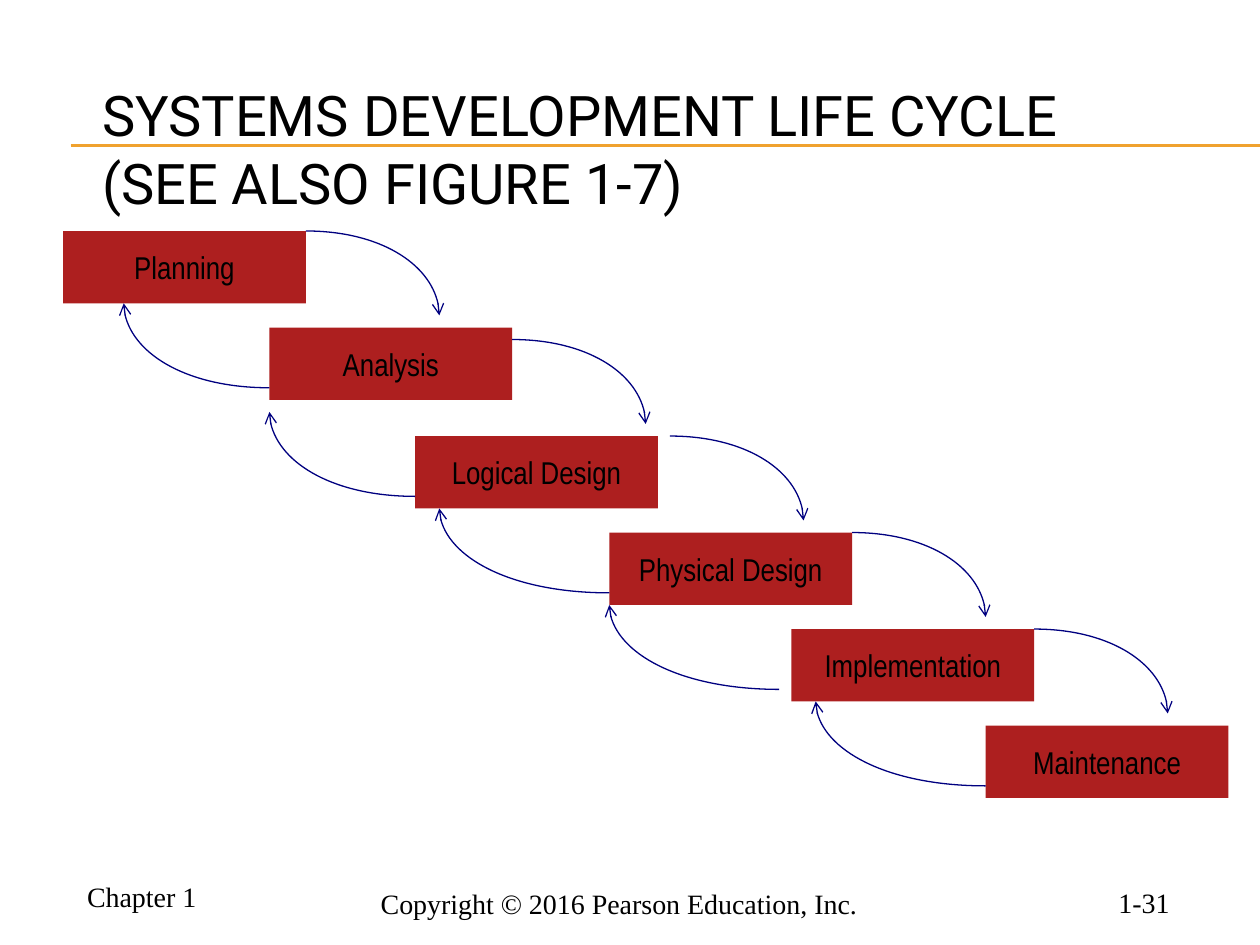
from copy import deepcopy

from lxml.etree import SubElement
from pptx import Presentation
from pptx.dml.color import RGBColor
from pptx.enum.shapes import MSO_CONNECTOR, MSO_SHAPE
from pptx.enum.text import MSO_ANCHOR as Anchor, MSO_AUTO_SIZE, PP_ALIGN as Align
from pptx.oxml.ns import qn
from pptx.util import Inches, Pt


def color(hex_string):
    return RGBColor.from_string(hex_string)


def write(shape, text, font, size, align, anchor, wrap=True):
    frame = shape.text_frame
    frame.text = text
    frame.word_wrap = wrap
    frame.auto_size = MSO_AUTO_SIZE.NONE
    frame.vertical_anchor = anchor
    paragraph = frame.paragraphs[0]
    paragraph.alignment = align
    for run in paragraph.runs:
        run.font.name = font
        run.font.size = Pt(size)
        run.font.color.rgb = color("000000")
    for line_break in paragraph._p.findall(qn("a:br")):
        line_break.append(deepcopy(paragraph.runs[0]._r.rPr))


presentation = Presentation()
presentation.slide_width = Inches(10)
presentation.slide_height = Inches(7.5)
slide = presentation.slides.add_slide(presentation.slide_layouts[5])
shapes = slide.shapes

# Title and the double rule behind it
for y in (1.15, 1.16):
    rule = shapes.add_connector(
        MSO_CONNECTOR.STRAIGHT, Inches(0.56), Inches(y), Inches(10), Inches(y))
    rule.line.color.rgb = color("F0A22E")
    rule.line.width = Pt(0.75)
    SubElement(rule._element.spPr, qn("a:effectLst"))

title = shapes.title
title.left, title.top = Inches(0.71), Inches(0.55)
title.width, title.height = Inches(8.5), Inches(1.25)
write(title, "SYSTEMS DEVELOPMENT LIFE CYCLE\v(SEE ALSO FIGURE 1-7)",
      "Roboto", 32, Align.LEFT, Anchor.MIDDLE)

# Footer
for text, left, top, width, height in (
    ("Chapter 1", 0.53, 6.9, 1.19, 0.4),
    ("Copyright © 2016 Pearson Education, Inc. ", 1.45, 6.83, 6.98, 0.52),
    ("1-31", 8.55, 6.94, 1.06, 0.4),
):
    box = shapes.add_textbox(Inches(left), Inches(top), Inches(width), Inches(height))
    write(box, text, "Times New Roman", 16, Align.CENTER, Anchor.BOTTOM)

# The diagram lies on a grid of 96 columns and 47 rows
LEFT, TOP = Pt(36), Pt(132)
COLUMN, ROW = Inches(9.25) / 96, Inches(4.5) / 47

phases = (
    ("Planning", 0, 0),
    ("Analysis", 17, 8),
    ("Logical Design", 29, 17),
    ("Physical Design", 45, 25),
    ("Implementation", 60, 33),
    ("Maintenance", 76, 41),
)
for name, column, row in phases:
    phase = shapes.add_shape(
        MSO_SHAPE.RECTANGLE, round(LEFT + column * COLUMN), round(TOP + row * ROW),
        round(20 * COLUMN), round(6 * ROW))
    phase.shadow.inherit = False
    phase.fill.solid()
    phase.fill.fore_color.rgb = color("AD1F1F")
    phase.line.fill.background()
    write(phase, name, "Arial Narrow", 18, Align.CENTER, Anchor.MIDDLE, wrap=False)

# Quarter-ellipse arrows: start column and row, then columns and rows travelled
forward = [(column, row, 11, 7) for column, row in
           ((20, 0), (37, 9), (50, 17), (65, 25), (80, 33))]
back = [(column, row, -across, -7) for column, row, across in
        ((17, 13, 12), (29, 22, 12), (45, 30, 14), (59, 38, 14), (76, 46, 14))]
CURVE = ((0, 0), (0.55, 0), (1, 0.45), (1, 1))
for column, row, across, down in forward + back:
    points = [(LEFT + (column + across * x) * COLUMN, TOP + (row + down * y) * ROW)
              for x, y in CURVE]
    builder = shapes.build_freeform(*points[0])
    builder.add_line_segments(points[1:], close=False)
    arrow = builder.convert_to_shape()
    # The straight segments become one cubic curve through the same points
    outline = next(arrow._element.iter(qn("a:path")))
    curve = SubElement(outline, qn("a:cubicBezTo"))
    for segment in outline.findall(qn("a:lnTo")):
        curve.append(segment[0])
        outline.remove(segment)
    arrow.shadow.inherit = False
    arrow.fill.background()
    arrow.line.color.rgb = color("000080")
    arrow.line.width = Pt(0.75)
    SubElement(arrow.line._get_or_add_ln(), qn("a:tailEnd"), type="arrow")

presentation.save("out.pptx")
